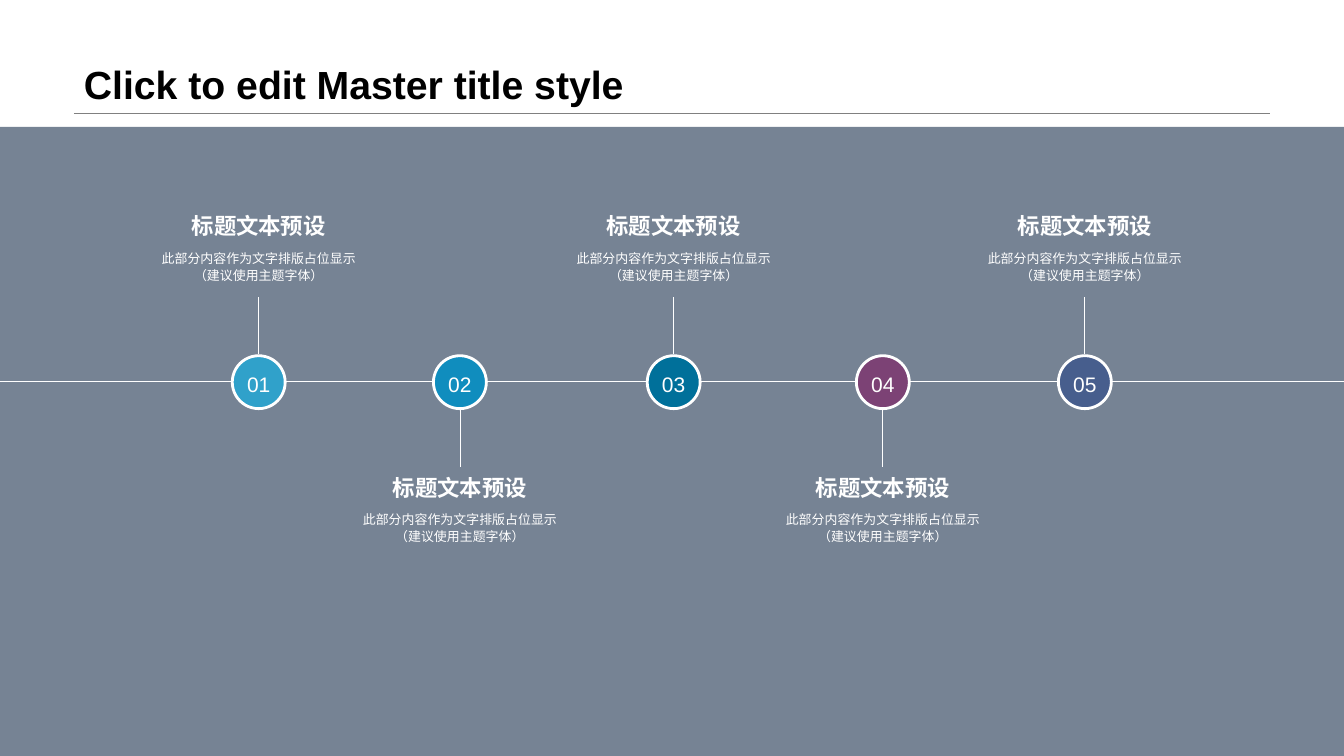
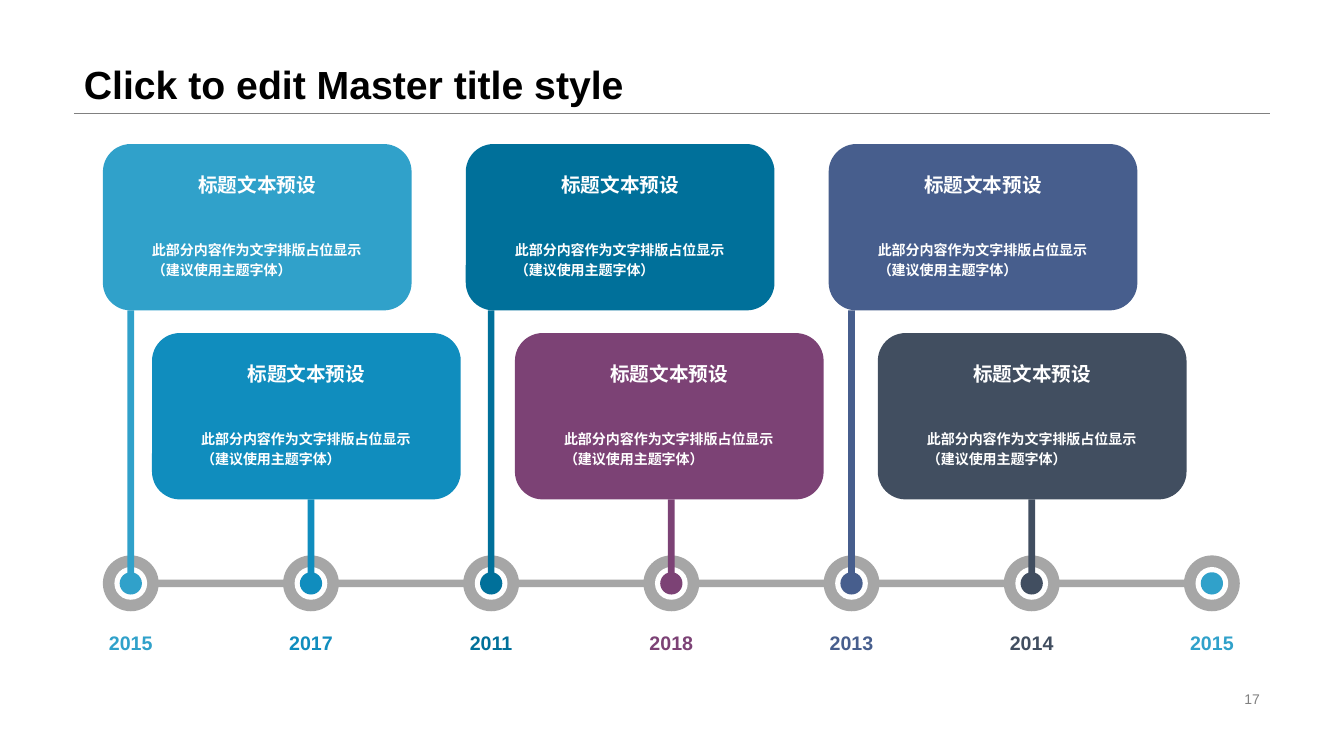
from copy import deepcopy

from pptx import Presentation
from pptx.dml.color import RGBColor
from pptx.enum.shapes import MSO_CONNECTOR, MSO_SHAPE
from pptx.enum.text import MSO_ANCHOR, PP_ALIGN
from pptx.oxml.ns import qn
from pptx.oxml.xmlchemy import OxmlElement
from pptx.util import Inches, Pt

COLUMNS, ROWS = 160, 90
SLIDE_WIDTH, SLIDE_HEIGHT = Inches(13.33), Inches(7.5)
COLORS = {
    "black": "000000", "white": "FFFFFF", "rule": "808080", "band": "768394",
    "track": "A6A6A6", "sky": "30A1CA", "blue": "108DBE", "teal": "00709A",
    "plum": "7C4275", "indigo": "475E8D", "slate": "414E60",
}
FONT = "Arial"
TITLE = "Click to edit Master title style"
HEADING = "标题文本预设"
BODY = "此部分内容作为文字排版占位显示\n（建议使用主题字体）"


def rgb(name):
    return RGBColor.from_string(COLORS[name])


def write_text(frame, text, size=10, color="white", bold=False,
               align=PP_ALIGN.CENTER, anchor=MSO_ANCHOR.MIDDLE,
               spacing=1.0, inset=(0, 0), wrap=True):
    """Fill a text frame; a newline becomes a line break of the same format."""
    frame.word_wrap = wrap
    frame.vertical_anchor = anchor
    frame.margin_left = frame.margin_right = Grid.x(inset[0])
    frame.margin_top = frame.margin_bottom = Grid.y(inset[1])
    paragraph = frame.paragraphs[0]
    paragraph.text = text
    paragraph.alignment = align
    paragraph.line_spacing = spacing
    for run in paragraph.runs:
        run.font.name = FONT
        run.font.size = Pt(size)
        run.font.bold = bold
        run.font.color.rgb = rgb(color)
    for line_break in paragraph._p.findall(qn("a:br")):
        line_break.insert(0, deepcopy(paragraph.runs[0]._r.rPr))


class Grid:
    """Draws on the current slide in square cells, 160 columns by 90 rows."""

    def __init__(self, presentation):
        self.presentation = presentation
        self.slide = None

    @staticmethod
    def x(columns):
        return round(SLIDE_WIDTH * columns / COLUMNS)

    @staticmethod
    def y(rows):
        return round(SLIDE_HEIGHT * rows / ROWS)

    def box(self, left, top, width, height):
        return self.x(left), self.y(top), self.x(width), self.y(height)

    def new_slide(self, title):
        layout = self.presentation.slide_layouts[6]
        self.slide = self.presentation.slides.add_slide(layout)
        self.line(8.8, 13.45, 151.2, 13.45, "rule", 0.25)
        self.text(title, 8.8, 0, 142.4, 13.45, size=28, color="black", bold=True,
                  align=PP_ALIGN.LEFT, anchor=MSO_ANCHOR.BOTTOM, spacing=0.9,
                  inset=(1.2, 0.6))

    def text(self, text, left, top, width, height, **text_format):
        shape = self.slide.shapes.add_textbox(*self.box(left, top, width, height))
        write_text(shape.text_frame, text, **text_format)

    def shape(self, kind, left, top, width, height, fill, outline=None):
        shape = self.slide.shapes.add_shape(kind, *self.box(left, top, width, height))
        shape.shadow.inherit = False
        shape.fill.solid()
        shape.fill.fore_color.rgb = rgb(fill)
        if outline:
            shape.line.color.rgb = rgb(outline)
            shape.line.width = Pt(2)
        else:
            shape.line.fill.background()
        return shape

    def rectangle(self, left, top, width, height, fill):
        return self.shape(MSO_SHAPE.RECTANGLE, left, top, width, height, fill)

    def circle(self, center_x, center_y, diameter, fill, outline=None):
        radius = diameter / 2
        return self.shape(MSO_SHAPE.OVAL, center_x - radius, center_y - radius,
                          diameter, diameter, fill, outline)

    def line(self, start_x, start_y, end_x, end_y, color, width):
        connector = self.slide.shapes.add_connector(
            MSO_CONNECTOR.STRAIGHT, self.x(start_x), self.y(start_y),
            self.x(end_x), self.y(end_y))
        connector.line.color.rgb = rgb(color)
        connector.line.width = Pt(width)
        connector._element.spPr.append(OxmlElement("a:effectLst"))

    def caption(self, center, top):
        left, width = center - 13.4, 26.8
        self.text(HEADING, left, top, width, 4.2, size=16, bold=True,
                  anchor=MSO_ANCHOR.TOP)
        self.text(BODY, left, top + 4.3, width, 4.1, size=9.2,
                  anchor=MSO_ANCHOR.TOP, spacing=1.1)

    def card(self, left, top, width, height, fill):
        self.shape(MSO_SHAPE.ROUNDED_RECTANGLE, left, top, width, height, fill)
        self.text(HEADING, left, top + 1.2, width, 7.3, size=14, bold=True)
        self.text(BODY, left + 5.85, top + 8.5, 27, 10.1, bold=True,
                  align=PP_ALIGN.LEFT, spacing=1.2)


def build_numbered_timeline(grid):
    grid.new_slide(TITLE)
    grid.rectangle(0, 15.1, COLUMNS, 74.9, "band")
    middle = 45.5
    grid.line(0, 45.4, COLUMNS, 45.4, "white", 0.5)
    stops = [(30.8, "sky"), (54.75, "blue"), (80.2, "teal"),
             (105.1, "plum"), (129.15, "indigo")]
    for number, (center, color) in enumerate(stops, 1):
        above = number % 2 == 1
        direction = -1 if above else 1
        grid.line(center, middle + 3.3 * direction,
                  center, middle + 10.1 * direction, "white", 0.5)
        circle = grid.circle(center, middle, 6.3, color, "white")
        write_text(circle.text_frame, f"{number:02d}", size=15,
                   inset=(0, 0), wrap=False)
        circle.text_frame.margin_top = grid.y(0.5)
        grid.caption(center, 25.3 if above else 56.4)


def build_year_timeline(grid):
    grid.new_slide(TITLE)
    grid.text("17", 113, 81.8, 38.2, 2.8, color="rule",
              align=PP_ALIGN.RIGHT, inset=(1.2, 0))
    stops = [("2015", "sky"), ("2017", "blue"), ("2011", "teal"), ("2018", "plum"),
             ("2013", "indigo"), ("2014", "slate"), ("2015", "sky")]
    first, pitch, middle = 15.57, 21.45, 69.45
    centers = [first + pitch * index for index in range(len(stops))]
    for center in centers[:-1]:
        grid.rectangle(center + 3.1, middle - 0.45, pitch - 6.1, 0.9, "track")
    for center, (year, color) in zip(centers, stops):
        for diameter, fill in ((6.65, "track"), (3.9, "white"), (2.65, color)):
            grid.circle(center, middle, diameter, fill)
        grid.text(year, center - 3.85, 74.4, 7.7, 4.1, size=14, color=color,
                  bold=True, wrap=False)
    card_width, card_height = 36.75, 19.8
    for index, (center, (_, color)) in enumerate(zip(centers[:-1], stops)):
        column, row = divmod(index, 2)
        left = 12.25 + 43.2 * column + 5.85 * row
        top = 17.15 + 22.5 * row
        bottom = top + card_height
        grid.card(left, top, card_width, card_height, color)
        grid.rectangle(center - 0.4, bottom, 0.8, 68.4 - bottom, color)


def main():
    presentation = Presentation()
    presentation.slide_width = SLIDE_WIDTH
    presentation.slide_height = SLIDE_HEIGHT
    grid = Grid(presentation)
    build_numbered_timeline(grid)
    build_year_timeline(grid)
    presentation.save("out.pptx")


if __name__ == "__main__":
    main()
